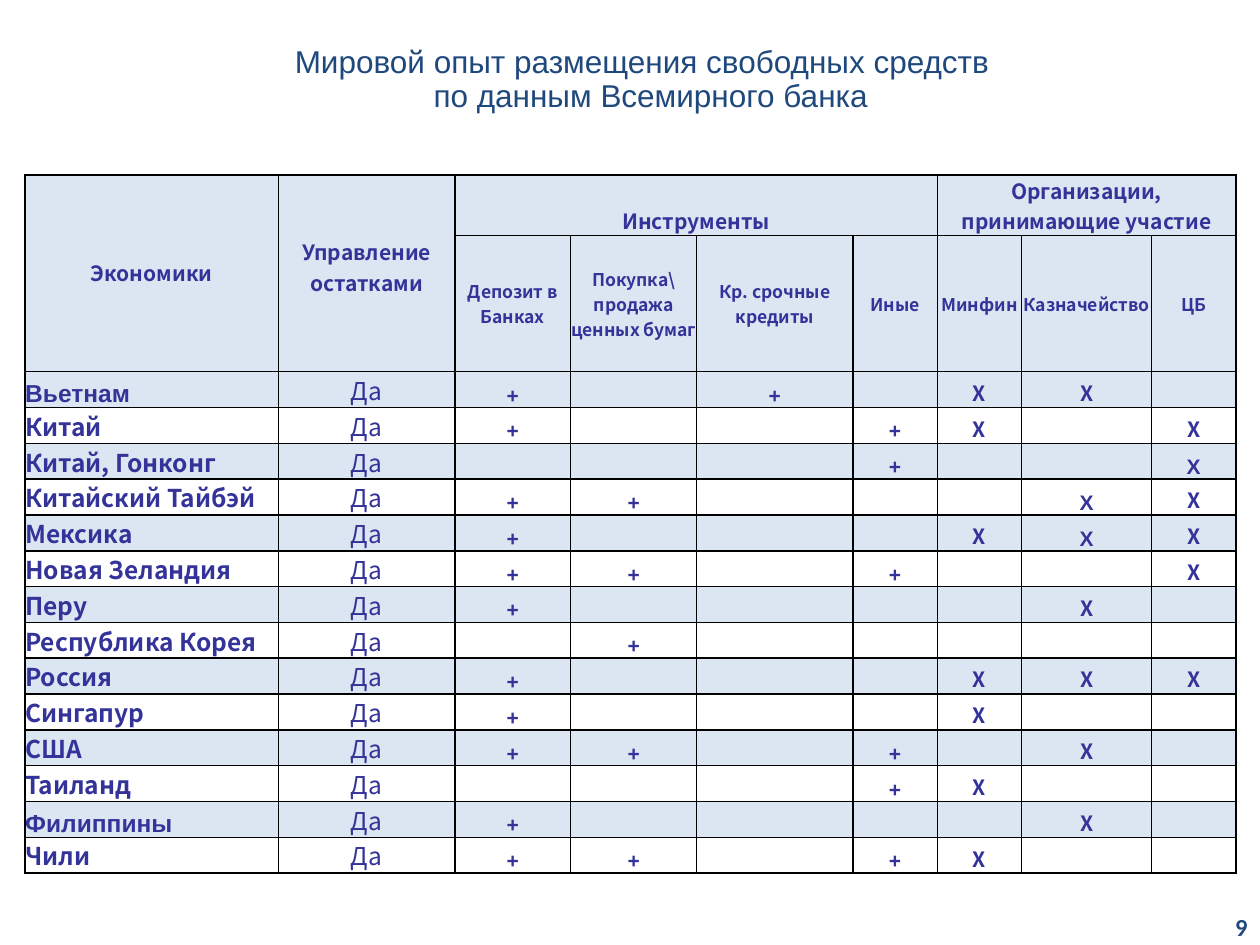
from dataclasses import dataclass

from lxml import etree
from pptx import Presentation
from pptx.dml.color import RGBColor
from pptx.enum.text import MSO_ANCHOR, MSO_AUTO_SIZE, PP_ALIGN
from pptx.oxml.ns import qn
from pptx.util import Inches, Pt

LEFT, CENTER, RIGHT = PP_ALIGN.LEFT, PP_ALIGN.CENTER, PP_ALIGN.RIGHT
MIDDLE, BOTTOM = MSO_ANCHOR.MIDDLE, MSO_ANCHOR.BOTTOM
NO_AUTOFIT = MSO_AUTO_SIZE.NONE

NAVY = RGBColor(0x1F, 0x49, 0x7D)
INDIGO = RGBColor(0x33, 0x33, 0x99)
PALE_BLUE = RGBColor(0xDC, 0xE6, 0xF2)
WHITE = RGBColor(0xFF, 0xFF, 0xFF)
BLACK = RGBColor(0x00, 0x00, 0x00)

ARIAL, CALIBRI, NOTO = "Arial", "Calibri", "Noto Sans CJK JP"

COLUMN_WIDTHS = (2.01, 1.4, 0.92, 1, 1.24, 0.67, 0.67, 1.03, 0.67)
HEADER_HEIGHTS = (0.48, 1.08)
COUNTRIES_HEIGHT = 3.98


@dataclass(frozen=True)
class Style:
    size: float
    font: str = NOTO
    bold: bool = True
    color: RGBColor = INDIGO
    align: PP_ALIGN = CENTER


@dataclass(frozen=True)
class Header:
    row: int
    column: int
    text: str
    row_span: int = 1
    column_span: int = 1
    bottom: float = 0


@dataclass(frozen=True)
class Country:
    name: str
    marks: str
    font: str = NOTO


TITLE_STYLE = Style(18, ARIAL, False, NAVY)
PAGE_STYLE = Style(14, CALIBRI, True, NAVY, RIGHT)
GROUP_STYLE = Style(12)
COLUMN_STYLE = Style(10)
ANSWER_STYLE = Style(14, bold=False)
MARKS = {
    "+": ("+", Style(12, ARIAL)),
    "N": ("Х", Style(12)),
    "A": ("Х", Style(12, ARIAL)),
}

TITLE_LINES = (
    "Мировой опыт размещения свободных средств ",
    " по данным Всемирного банка",
)
HEADERS = (
    Header(0, 0, "Экономики", row_span=2, bottom=0.67),
    Header(0, 1, "Управление остатками", row_span=2, bottom=0.59),
    Header(0, 2, "Инструменты", column_span=4),
    Header(0, 6, "Организации, принимающие участие", column_span=3),
    Header(1, 2, "Депозит в Банках"),
    Header(1, 3, "Покупка\\ продажа ценных бумаг"),
    Header(1, 4, "Кр. срочные кредиты"),
    Header(1, 5, "Иные"),
    Header(1, 6, "Минфин"),
    Header(1, 7, "Казначейство"),
    Header(1, 8, "ЦБ"),
)
COUNTRIES = (
    Country("Вьетнам", "+.+.NN.", ARIAL),
    Country("Китай", "+..+N.N"),
    Country("Китай, Гонконг", "...+..A"),
    Country("Китайский Тайбэй", "++...AN"),
    Country("Мексика", "+...NAN"),
    Country("Новая Зеландия", "++.+..N"),
    Country("Перу", "+....N."),
    Country("Республика Корея", ".+....."),
    Country("Россия", "+...NNN"),
    Country("Сингапур", "+...N.."),
    Country("США", "++.+.N."),
    Country("Таиланд", "...+N.."),
    Country("Филиппины", "+....N.", ARIAL),
    Country("Чили", "++.+N.."),
)


def write(paragraph, text: str, style: Style) -> None:
    paragraph.alignment = style.align
    span = paragraph.add_run()
    span.text = text
    formats = {"name": style.font, "size": Pt(style.size), "bold": style.bold}
    for name, value in formats.items():
        setattr(span.font, name, value)
    span.font.color.rgb = style.color


def set_frame(frame, **values) -> None:
    for name, value in values.items():
        setattr(frame, name, value)


def add_borders(cell) -> None:
    properties = cell._tc.get_or_add_tcPr()
    for side in ("lnL", "lnR", "lnT", "lnB"):
        line = etree.SubElement(properties, qn(f"a:{side}"), w=str(Pt(1)))
        fill = etree.SubElement(line, qn("a:solidFill"))
        etree.SubElement(fill, qn("a:srgbClr"), val=str(BLACK))


def format_cell(cell, color: RGBColor) -> None:
    add_borders(cell)
    cell.fill.solid()
    cell.fill.fore_color.rgb = color
    cell.vertical_anchor = BOTTOM
    for side in ("left", "top", "right", "bottom"):
        setattr(cell, f"margin_{side}", 0)


def write_cell(cell, text: str, style: Style) -> None:
    write(cell.text_frame.paragraphs[0], text, style)


def add_header(table, header: Header) -> None:
    cell = table.cell(header.row, header.column)
    if header.row_span > 1 or header.column_span > 1:
        cell.merge(table.cell(header.row + header.row_span - 1,
                              header.column + header.column_span - 1))
    if header.row == 1:
        cell.vertical_anchor = MIDDLE
    cell.margin_bottom = Inches(header.bottom)
    write_cell(cell, header.text, COLUMN_STYLE if header.row else GROUP_STYLE)


def add_country(table, row: int, country: Country) -> None:
    write_cell(table.cell(row, 0), country.name,
               Style(14, country.font, align=LEFT))
    write_cell(table.cell(row, 1), "Да", ANSWER_STYLE)
    for column, code in enumerate(country.marks, 2):
        cell = table.cell(row, column)
        if code in MARKS:
            write_cell(cell, *MARKS[code])
        else:
            paragraph = cell.text_frame.paragraphs[0]
            etree.SubElement(paragraph._p, qn("a:endParaRPr"), sz="1200")


def add_title(page) -> None:
    title = page.shapes.title
    set_frame(title, left=Inches(0.67), top=Inches(0.46),
              width=Inches(8.92), height=Inches(0.36))
    frame = title.text_frame
    margin = Inches(0.04)
    set_frame(frame, auto_size=NO_AUTOFIT, word_wrap=True,
              vertical_anchor=MIDDLE, margin_left=margin, margin_top=margin,
              margin_right=margin, margin_bottom=margin)
    for index, text in enumerate(TITLE_LINES):
        paragraph = frame.add_paragraph() if index else frame.paragraphs[0]
        paragraph.line_spacing = 0.9
        paragraph.space_before = Pt(0)
        write(paragraph, text, TITLE_STYLE)


def add_experience_table(page) -> None:
    country_height = COUNTRIES_HEIGHT / len(COUNTRIES)
    heights = HEADER_HEIGHTS + (country_height,) * len(COUNTRIES)
    table = page.shapes.add_table(
        len(heights), len(COLUMN_WIDTHS), Inches(0.2), Inches(1.39),
        Inches(sum(COLUMN_WIDTHS)), Inches(sum(heights))).table
    set_frame(table, first_row=False, horz_banding=False)
    for column, width in zip(table.columns, COLUMN_WIDTHS):
        column.width = Inches(width)
    for index, (row, height) in enumerate(zip(table.rows, heights)):
        row.height = Inches(height)
        shaded = index < len(HEADER_HEIGHTS) or index % 2 == 0
        for cell in row.cells:
            format_cell(cell, PALE_BLUE if shaded else WHITE)
    for header in HEADERS:
        add_header(table, header)
    for row, country in enumerate(COUNTRIES, len(HEADER_HEIGHTS)):
        add_country(table, row, country)


def add_page_number(page) -> None:
    box = page.shapes.add_textbox(Inches(9.69), Inches(7.21),
                                  Inches(0.31), Inches(0.29))
    set_frame(box.text_frame, word_wrap=False, vertical_anchor=MIDDLE)
    write(box.text_frame.paragraphs[0], "9", PAGE_STYLE)


def main() -> None:
    deck = Presentation()
    deck.slide_width, deck.slide_height = Inches(10), Inches(7.5)
    page = deck.slides.add_slide(deck.slide_layouts[5])
    add_title(page)
    add_page_number(page)
    add_experience_table(page)
    deck.save("out.pptx")


if __name__ == "__main__":
    main()
